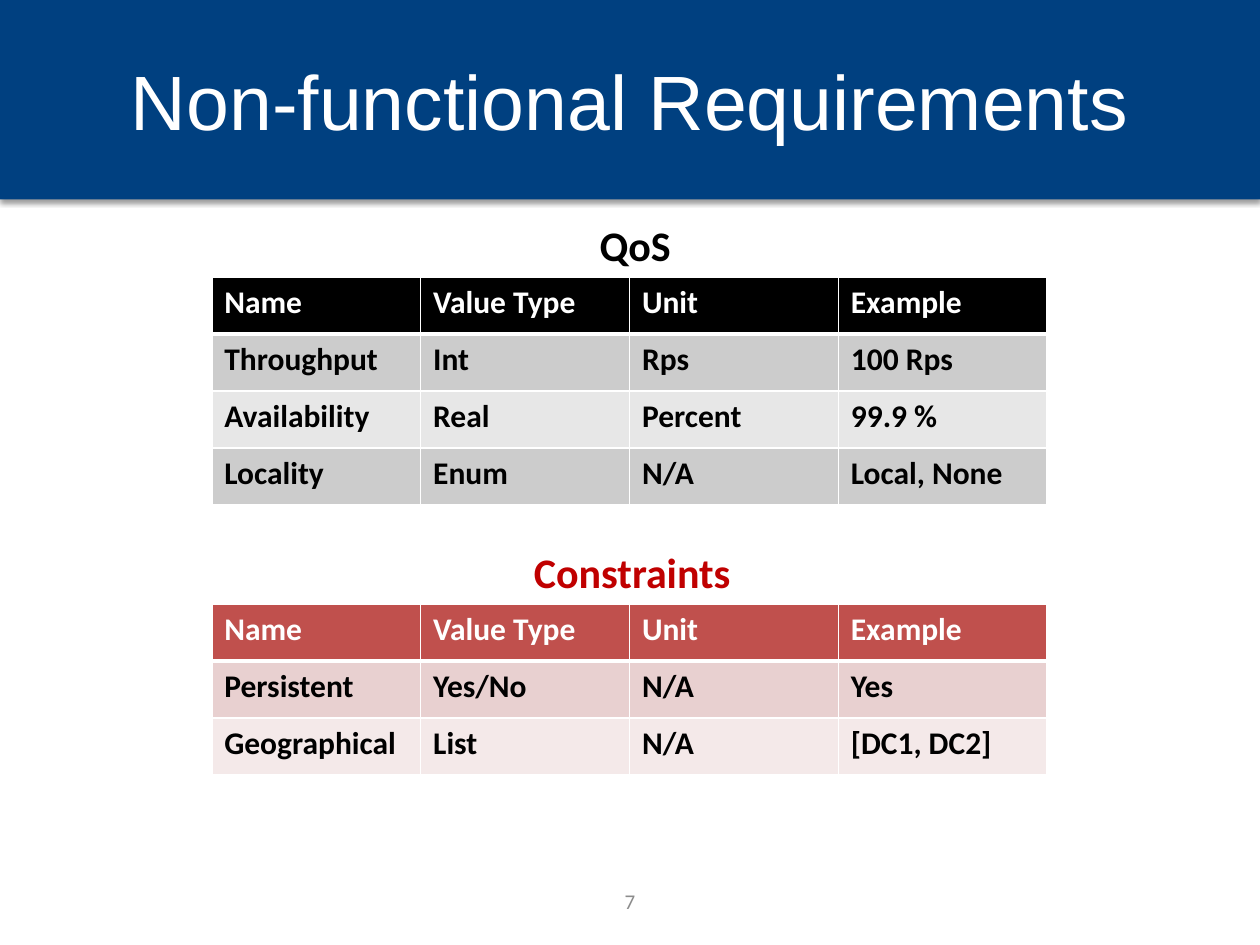
from lxml import etree
from pptx import Presentation
from pptx.dml.color import RGBColor
from pptx.enum import shapes, text
from pptx.oxml import ns
from pptx.util import Pt

COLORS = {
    "banner": "004080", "white": "FFFFFF", "black": "000000", "number": "8C8C8C",
    "gray_dark": "CCCCCC", "gray_light": "E7E7E7",
    "red": "C00000", "red_header": "C0504D", "red_dark": "E8D0D0", "red_light": "F4E9E9",
}
HEADINGS = ["Name", "Value Type", "Unit", "Example"]
QOS = [
    HEADINGS,
    ["Throughput", "Int", "Rps", "100 Rps"],
    ["Availability", "Real", "Percent", "99.9 %"],
    ["Locality", "Enum", "N/A", "Local, None"],
]
CONSTRAINTS = [
    HEADINGS,
    ["Persistent", "Yes/No", "N/A", "Yes"],
    ["Geographical", "List", "N/A", "[DC1, DC2]"],
]
ROW_HEIGHT = 32.6
CAPTION_HEIGHT = 36


def rgb(name):
    return RGBColor.from_string(COLORS[name])


def write_text(frame, content, size=18, font="Calibri", color="black", bold=False,
               align=text.PP_ALIGN.LEFT, anchor=text.MSO_ANCHOR.TOP):
    frame.word_wrap = True
    frame.vertical_anchor = anchor
    paragraph = frame.paragraphs[0]
    paragraph.alignment = align
    run = paragraph.add_run()
    run.text = content
    run.font.size = Pt(size)
    run.font.name = font
    run.font.bold = bold
    run.font.color.rgb = rgb(color)


def add_text(slide, left, top, width, height, content, **style):
    shape = slide.shapes.add_textbox(Pt(left), Pt(top), Pt(width), Pt(height))
    write_text(shape.text_frame, content, **style)


def add_shadow(shape):
    effects = shape._element.spPr.find(ns.qn("a:effectLst"))
    shadow = etree.SubElement(effects, ns.qn("a:outerShdw"), blurRad=str(Pt(3.1)),
                              dist=str(Pt(1.6)), dir="5400000", rotWithShape="0")
    color = etree.SubElement(shadow, ns.qn("a:srgbClr"), val=COLORS["black"])
    etree.SubElement(color, ns.qn("a:alpha"), val="38000")


def set_borders(cell, **widths):
    properties = cell._tc.get_or_add_tcPr()
    for index, side in enumerate("LRTB"):
        line = etree.Element(ns.qn("a:ln" + side), w=str(Pt(widths.get(side, 1))))
        fill = etree.SubElement(line, ns.qn("a:solidFill"))
        etree.SubElement(fill, ns.qn("a:srgbClr"), val=COLORS["white"])
        properties.insert(index, line)


def add_banner(slide, left, top, width, height, title):
    banner = slide.shapes.add_shape(shapes.MSO_SHAPE.RECTANGLE,
                                    Pt(left), Pt(top), Pt(width), Pt(height))
    banner.shadow.inherit = False
    banner.fill.solid()
    banner.fill.fore_color.rgb = rgb("banner")
    banner.line.fill.background()
    add_shadow(banner)
    add_text(slide, left + 36, top + 12, width - 72, 90, title, size=44, font="Arial",
             color="white", align=text.PP_ALIGN.CENTER, anchor=text.MSO_ANCHOR.MIDDLE)


def add_table_section(slide, left, top, width, rows, caption, caption_left, caption_width,
                      caption_color, header, bands):
    add_text(slide, left + caption_left, top, caption_width, CAPTION_HEIGHT, caption,
             size=24, color=caption_color, bold=True)
    frame = slide.shapes.add_table(len(rows), len(rows[0]), Pt(left), Pt(top + CAPTION_HEIGHT + 0.5),
                                   Pt(width), Pt(ROW_HEIGHT * len(rows)))
    table = frame.table
    for row_index, values in enumerate(rows):
        table.rows[row_index].height = Pt(ROW_HEIGHT)
        is_header = row_index == 0
        for column_index, value in enumerate(values):
            cell = table.cell(row_index, column_index)
            cell.fill.solid()
            cell.fill.fore_color.rgb = rgb(header if is_header else bands[(row_index - 1) % 2])
            set_borders(cell, T=3 if row_index == 1 else 1, B=3 if is_header else 1)
            write_text(cell.text_frame, value, bold=True, color="white" if is_header else "black")


def add_page_number(slide, left, top, width, height, number):
    add_text(slide, left, top, width, height, number, size=12, color="number",
             align=text.PP_ALIGN.CENTER, anchor=text.MSO_ANCHOR.MIDDLE)


def main():
    presentation = Presentation()
    presentation.slide_width, presentation.slide_height = Pt(720), Pt(540)
    slide = presentation.slides.add_slide(presentation.slide_layouts[6])
    add_banner(slide, 0, 0, 720, 114, "Non-functional Requirements")
    add_table_section(slide, 121, 121.8, 477.4, QOS, "QoS", 214.5, 79, "black",
                      "black", ["gray_dark", "gray_light"])
    add_table_section(slide, 121, 308.6, 477.4, CONSTRAINTS, "Constraints", 177, 145.5, "red",
                      "red_header", ["red_dark", "red_light"])
    add_page_number(slide, 276, 500.5, 168, 28.8, "7")
    presentation.save("out.pptx")


if __name__ == "__main__":
    main()
